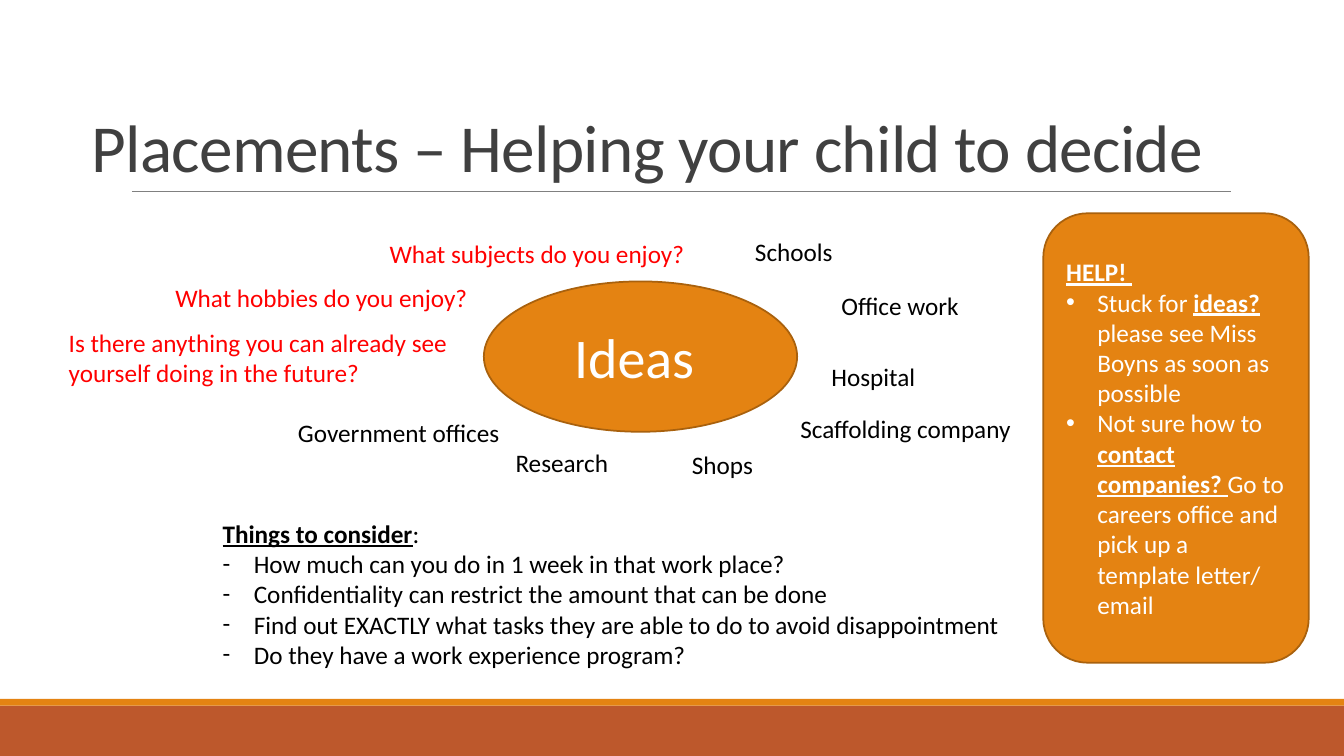
"""Build the slide that helps families choose a work placement."""
from dataclasses import dataclass

from lxml.etree import SubElement
from pptx import Presentation
from pptx.dml.color import RGBColor
from pptx.enum.shapes import MSO_CONNECTOR as Connector, MSO_SHAPE as Preset
from pptx.enum.text import MSO_ANCHOR as Anchor, MSO_AUTO_SIZE as AutoSize, PP_ALIGN as Align
from pptx.oxml.ns import qn
from pptx.shapes.autoshape import Shape
from pptx.slide import Slide
from pptx.text.text import TextFrame, _Paragraph as Paragraph, _Run as Run
from pptx.util import Inches, Length, Pt

WHITE = RGBColor(0xFF, 0xFF, 0xFF)
BLACK = RGBColor(0x00, 0x00, 0x00)
RED = RGBColor(0xFF, 0x00, 0x00)
CHARCOAL = RGBColor(0x40, 0x40, 0x40)
GREY = RGBColor(0x80, 0x80, 0x80)
ORANGE = RGBColor(0xE4, 0x83, 0x12)
BROWN = RGBColor(0xA9, 0x61, 0x0D)
RUST = RGBColor(0xBD, 0x58, 0x2C)

FONT = "Calibri"
BODY_SIZE = 18
COLUMNS, ROWS = 160, 90
CELL = Inches(7.5) / ROWS
HANGING = Inches(0.31)


@dataclass(frozen=True)
class Area:
    """A rectangle counted in grid columns and rows."""
    column: float
    row: float
    columns: float
    rows: float

    def lengths(self) -> tuple[Length, ...]:
        """Return left, top, width and height."""
        return tuple(cells(n) for n in (self.column, self.row, self.columns, self.rows))


@dataclass(frozen=True)
class Thought:
    """A short phrase placed around the central ellipse."""
    words: str
    column: float
    row: float
    color: RGBColor = BLACK
    columns: float = 35.5
    rows: float = 4.8


@dataclass(frozen=True)
class Span:
    """A stretch of words, strong when bold and underlined."""
    words: str
    strong: bool = False


@dataclass(frozen=True)
class Entry:
    """One paragraph of a list, with its bullet if it has one."""
    spans: tuple[Span, ...]
    bullet: str = ""


THOUGHTS = (
    Thought("Scaffolding company", 94.1, 48.6),
    Thought("Schools", 88.7, 27.5),
    Thought("Office work", 99, 34),
    Thought("Hospital", 97.8, 42.4),
    Thought("Shops", 81.2, 52.9),
    Thought("Government offices", 34.3, 49.1),
    Thought("Research", 60.2, 52.7),
    Thought("What subjects do you enjoy?", 45.2, 27.8, RED, 40.6),
    Thought("What hobbies do you enjoy?", 19.7, 33, RED, 40.6),
    Thought("Is there anything you can already see yourself doing in the future?",
            7, 38.4, RED, 50.3, 8.5),
)
CONSIDERATIONS = (
    Entry((Span("Things to consider", True), Span(":"))),
    *(Entry((Span(words),), "-") for words in (
        "How much can you do in 1 week in that work place?",
        "Confidentiality can restrict the amount that can be done",
        "Find out EXACTLY what tasks they are able to do to avoid disappointment",
        "Do they have a work experience program?",
    )),
)
HELP = (
    Entry((Span("HELP! ", True),)),
    Entry((Span("Stuck for "), Span("ideas?", True),
           Span(" please see Miss Boyns as soon as possible")), "•"),
    Entry((Span("Not sure how to "), Span("contact companies? ", True),
           Span("Go to careers office and pick up a template letter/ email")), "•"),
)


def cells(count: float) -> Length:
    """Convert a number of grid cells to a length."""
    return Length(round(count * CELL))


def place(shape: Shape, area: Area) -> None:
    """Move and size a shape on the grid."""
    shape.left, shape.top, shape.width, shape.height = area.lengths()


def style_run(run: Run, size: float, color: RGBColor, strong: bool = False) -> None:
    """Format one run."""
    run.font.name = FONT
    run.font.size = Pt(size)
    run.font.color.rgb = color
    run.font.bold = strong
    run.font.underline = strong


def set_bullet(paragraph: Paragraph, bullet: str) -> None:
    """Give a paragraph a hanging bullet, or none."""
    properties = paragraph._p.get_or_add_pPr()
    indent = HANGING if bullet else 0
    properties.set("marL", str(indent))
    properties.set("indent", str(-indent))
    if bullet:
        SubElement(properties, qn("a:buFont")).set("typeface", "Arial" if bullet == "•" else FONT)
        SubElement(properties, qn("a:buChar")).set("char", bullet)
    else:
        SubElement(properties, qn("a:buNone"))


def write_list(frame: TextFrame, entries: tuple[Entry, ...], color: RGBColor) -> None:
    """Write list entries into a text frame."""
    frame.word_wrap = True
    frame.auto_size = AutoSize.NONE
    for index, entry in enumerate(entries):
        paragraph = frame.add_paragraph() if index else frame.paragraphs[0]
        paragraph.alignment = Align.LEFT
        paragraph.space_before = Pt(0)
        set_bullet(paragraph, entry.bullet)
        for span in entry.spans:
            run = paragraph.add_run()
            run.text = span.words
            style_run(run, BODY_SIZE, color, span.strong)


def add_block(slide: Slide, preset: Preset, area: Area, fill: RGBColor,
              outline: RGBColor | None = None) -> Shape:
    """Add a filled preset shape."""
    block = slide.shapes.add_shape(preset, *area.lengths())
    block.shadow.inherit = False
    block.fill.solid()
    block.fill.fore_color.rgb = fill
    if outline is None:
        block.line.fill.background()
    else:
        block.line.color.rgb = outline
        block.line.width = Pt(1.25)
    return block


def add_rule(slide: Slide, start: float, end: float, row: float) -> None:
    """Draw the thin rule below the title."""
    rule = slide.shapes.add_connector(
        Connector.STRAIGHT, cells(start), cells(row), cells(end), cells(row))
    rule.line.color.rgb = GREY
    rule.line.width = Pt(0.5)
    SubElement(rule._element.spPr, qn("a:effectLst"))


def write_title(title: Shape, words: str) -> None:
    """Write and format the slide title."""
    place(title, Area(9.7, 3.7, 136.7, 19.1))
    frame = title.text_frame
    frame.text = words
    frame.word_wrap = True
    frame.auto_size = AutoSize.NONE
    frame.vertical_anchor = Anchor.BOTTOM
    heading = frame.paragraphs[0]
    heading.alignment = Align.LEFT
    heading.line_spacing = 0.85
    style_run(heading.runs[0], 48, CHARCOAL)
    heading.runs[0].font._element.set("spc", "-50")


def add_thought(slide: Slide, thought: Thought) -> None:
    """Add one phrase around the ellipse."""
    area = Area(thought.column, thought.row, thought.columns, thought.rows)
    frame = slide.shapes.add_textbox(*area.lengths()).text_frame
    frame.text = thought.words
    frame.word_wrap = True
    style_run(frame.paragraphs[0].runs[0], BODY_SIZE, thought.color)


def main() -> None:
    """Build and save the presentation."""
    deck = Presentation()
    deck.slide_width, deck.slide_height = cells(COLUMNS), cells(ROWS)
    slide = deck.slides.add_slide(deck.slide_layouts[1])

    add_block(slide, Preset.RECTANGLE, Area(0, 84, COLUMNS, 6), RUST)
    add_block(slide, Preset.RECTANGLE, Area(0, 83.2, COLUMNS, 0.8), ORANGE)
    add_rule(slide, 15.7, 146.5, 22.8)
    write_title(slide.shapes.title, "Placements – Helping your child to decide")

    ideas = add_block(slide, Preset.OVAL, Area(57.6, 33.5, 37.3, 17.9), ORANGE, BROWN).text_frame
    ideas.text = "Ideas "
    ideas.vertical_anchor = Anchor.MIDDLE
    ideas.paragraphs[0].alignment = Align.CENTER
    style_run(ideas.paragraphs[0].runs[0], 40, WHITE)

    for thought in THOUGHTS:
        add_thought(slide, thought)

    considerations = slide.placeholders[1]
    place(considerations, Area(25.3, 61.1, 109.2, 19.4))
    write_list(considerations.text_frame, CONSIDERATIONS, BLACK)

    help_panel = add_block(
        slide, Preset.ROUNDED_RECTANGLE, Area(124.2, 25.4, 31.6, 53.5), ORANGE, BROWN)
    help_panel.text_frame.vertical_anchor = Anchor.MIDDLE
    write_list(help_panel.text_frame, HELP, WHITE)

    deck.save("out.pptx")


if __name__ == "__main__":
    main()
